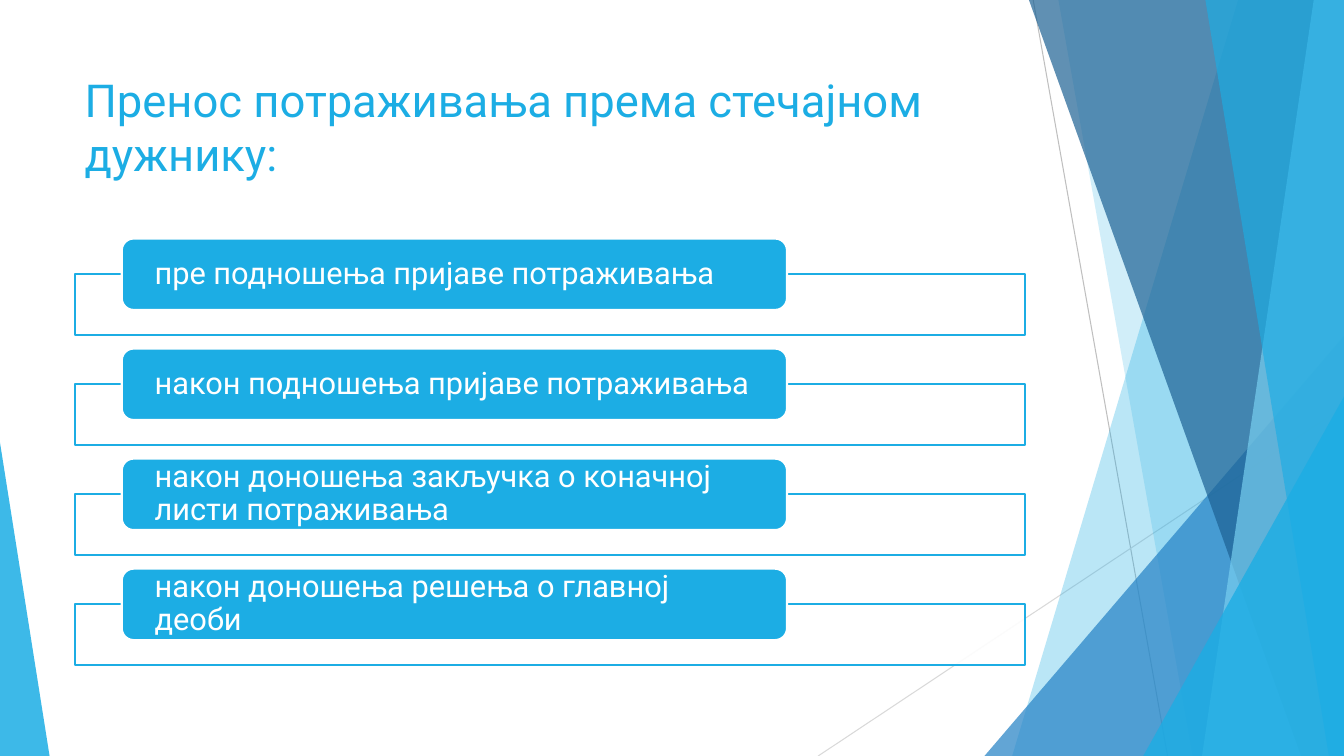
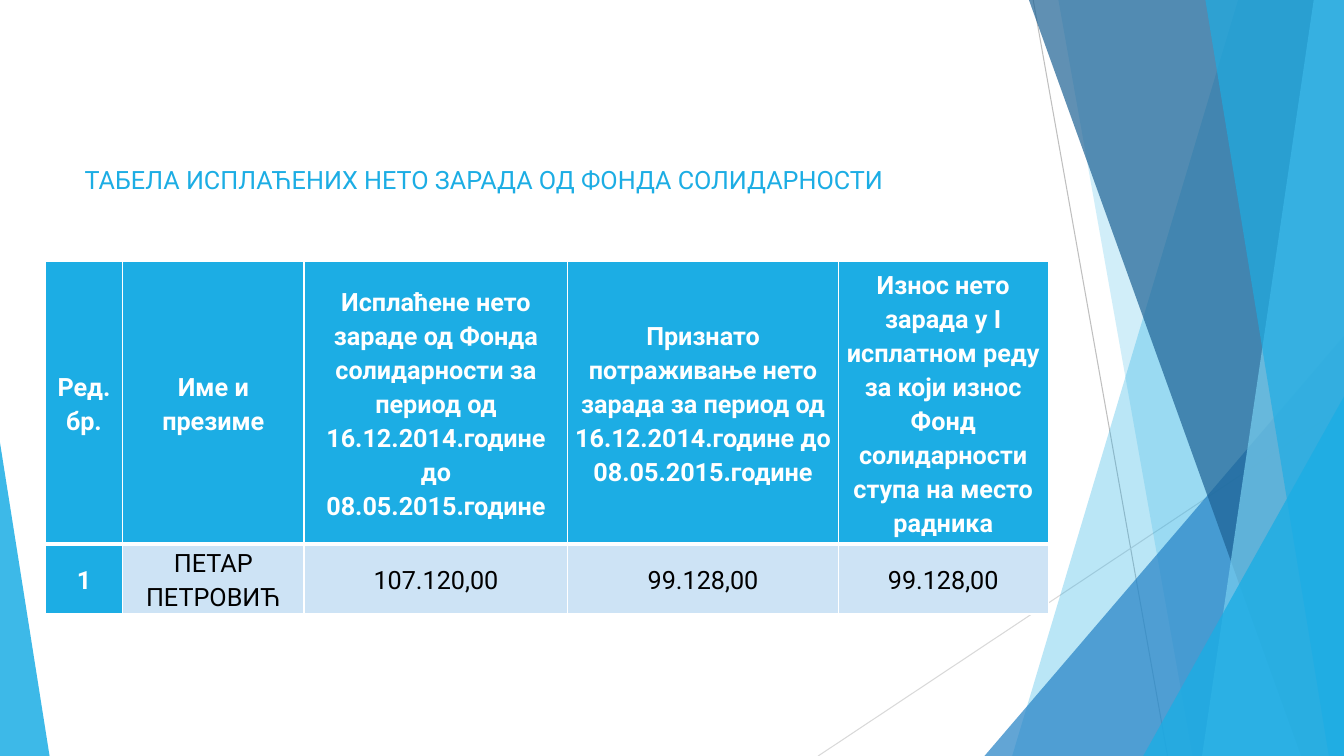
import dataclasses

import pptx
import pptx.dml.color
import pptx.enum.shapes
import pptx.enum.text
import pptx.oxml
import pptx.oxml.ns
import pptx.util

SHAPE = pptx.enum.shapes.MSO_SHAPE
ALIGN = pptx.enum.text.PP_ALIGN
ANCHOR = pptx.enum.text.MSO_ANCHOR

COLS, ROWS = 160, 90  # square grid, 12 cells to the inch


@dataclasses.dataclass(frozen=True)
class Theme:
    font: str = "Roboto"
    accent: str = "1CADE4"
    blue: str = "2683C6"
    navy: str = "1D6294"
    sky: str = "77CEEF"
    tint: str = "CDE3F5"
    white: str = "FFFFFF"
    black: str = "000000"
    rule_dark: str = "BFBFBF"
    rule_light: str = "D9D9D9"
    title_size: float = 32.4
    item_size: float = 22
    table_size: float = 18


def cells(n):
    return pptx.util.Inches(n / 12)


def rgb(colour):
    return pptx.dml.color.RGBColor.from_string(colour)


class Deck:
    def __init__(self, theme):
        self.theme = theme
        self.prs = pptx.Presentation()
        self.prs.slide_width = cells(COLS)
        self.prs.slide_height = cells(ROWS)
        self.s = None

    def new_slide(self):
        """Start a blank slide with the shared ribbons at its sides."""
        t = self.theme
        self.s = self.prs.slides.add_slide(self.prs.slide_layouts[6])
        self.rule(123, 0, 139, ROWS, t.rule_dark)
        self.rule(COLS, 48.4, 97.4, ROWS, t.rule_light)
        self.ribbon(147.4, 120.5, t.accent, 30)
        self.ribbon(126, 142, t.accent, 20)
        self.corner(117.2, COLS, 40, t.blue, 72)
        self.ribbon(122.5, 154.9, t.navy, 70)
        self.ribbon(156.4, 143.1, t.sky, 70)
        self.ribbon(143.5, 158.2, t.accent, 65)
        self.corner(136.1, COLS, 47.2, t.accent, 80)
        self.corner(0, 5.9, 52.7, t.accent, 85, apex=0)

    def paint(self, shape, fill, opacity=100, line=None):
        shape.shadow.inherit = False
        shape.fill.solid()
        shape.fill.fore_color.rgb = rgb(fill)
        if opacity < 100:
            clr = shape._element.spPr.xpath("a:solidFill/a:srgbClr")[0]
            alpha = pptx.oxml.parse_xml(
                f'<a:alpha {pptx.oxml.ns.nsdecls("a")} val="{opacity * 1000}"/>')
            clr.append(alpha)
        if line:
            shape.line.color.rgb = rgb(line)
            shape.line.width = pptx.util.Pt(1.5)
        else:
            shape.line.fill.background()

    def rule(self, x1, y1, x2, y2, colour):
        line = self.s.shapes.add_connector(
            pptx.enum.shapes.MSO_CONNECTOR.STRAIGHT,
            cells(x1), cells(y1), cells(x2), cells(y2))
        line.line.color.rgb = rgb(colour)
        line.line.width = pptx.util.Pt(0.75)
        line._element.spPr.append(pptx.oxml.parse_xml(
            f'<a:effectLst {pptx.oxml.ns.nsdecls("a")}/>'))

    def ribbon(self, top_x, bottom_x, colour, opacity):
        """Full-height panel from a slanted left edge to the slide's right edge."""
        outline = self.s.shapes.build_freeform(cells(top_x), 0)
        outline.add_line_segments([
            (cells(COLS), 0), (cells(COLS), cells(ROWS)), (cells(bottom_x), cells(ROWS))])
        self.paint(outline.convert_to_shape(), colour, opacity)

    def corner(self, left, right, top, colour, opacity, apex=1):
        """Right triangle on the bottom edge; apex 0 is at its left, 1 at its right."""
        sp = self.box(SHAPE.ISOSCELES_TRIANGLE, left, top, right - left, ROWS - top)
        sp.adjustments[0] = apex
        self.paint(sp, colour, opacity)

    def box(self, kind, x, y, w, h):
        return self.s.shapes.add_shape(kind, cells(x), cells(y), cells(w), cells(h))

    def add_text(self, p, text, size, colour, bold=False):
        r = p.add_run()
        r.text = text
        r.font.name = self.theme.font
        r.font.size = pptx.util.Pt(size)
        r.font.bold = bold
        r.font.color.rgb = rgb(colour)

    def title(self, text, size, y=8):
        sp = self.s.shapes.add_textbox(cells(8.9), cells(y), cells(112.8), cells(25.3 - y))
        tf = sp.text_frame
        tf.word_wrap = True
        self.add_text(tf.paragraphs[0], text, size, self.theme.accent)

    def item(self, y, text):
        """Outlined frame with a filled label over its top edge."""
        t = self.theme
        frame = self.box(SHAPE.RECTANGLE, 8.9, y + 4.2, 113.1, 7.3)
        self.paint(frame, t.white, 90, t.accent)
        label = self.box(SHAPE.ROUNDED_RECTANGLE, 14.5, y, 79.2, 8.5)
        self.paint(label, t.accent, line=t.white)
        tf = label.text_frame
        tf.word_wrap = True
        tf.vertical_anchor = ANCHOR.MIDDLE
        tf.margin_left = tf.margin_right = cells(3.5)
        tf.margin_top = tf.margin_bottom = 0
        p = tf.paragraphs[0]
        p.alignment = ALIGN.LEFT
        p.line_spacing = 0.9
        self.add_text(p, text, t.item_size, t.white)

    def borders(self, cell, bottom):
        tc_pr = cell._tc.get_or_add_tcPr()
        sides = {"lnL": 1, "lnR": 1, "lnT": 1, "lnB": bottom}
        for i, (side, width) in enumerate(sides.items()):
            tc_pr.insert(i, pptx.oxml.parse_xml(
                f'<a:{side} {pptx.oxml.ns.nsdecls("a")} w="{pptx.util.Pt(width)}">'
                f'<a:solidFill><a:srgbClr val="{self.theme.white}"/></a:solidFill>'
                f'</a:{side}>'))

    def table(self, x, y, widths, heights, rows):
        """Table whose first row and first column are headings."""
        t = self.theme
        tbl = self.s.shapes.add_table(
            len(heights), len(widths), cells(x), cells(y),
            cells(sum(widths)), cells(sum(heights))).table
        tbl.first_col = True
        tbl.horz_banding = False
        for col, w in zip(tbl.columns, widths):
            col.width = cells(w)
        for row, h in zip(tbl.rows, heights):
            row.height = cells(h)
        for i, row in enumerate(rows):
            for j, text in enumerate(row):
                heading = i == 0 or j == 0
                cell = tbl.cell(i, j)
                cell.fill.solid()
                cell.fill.fore_color.rgb = rgb(t.accent if heading else t.tint)
                self.borders(cell, bottom=3 if i == 0 else 1)
                cell.vertical_anchor = ANCHOR.MIDDLE
                cell.margin_left = cell.margin_right = pptx.util.Inches(0.07)
                cell.margin_top = cell.margin_bottom = 0
                p = cell.text_frame.paragraphs[0]
                p.alignment = ALIGN.CENTER
                p.line_spacing = 1.15
                self.add_text(p, text, t.table_size, t.white if heading else t.black, heading)


def main():
    theme = Theme()
    deck = Deck(theme)

    deck.new_slide()
    deck.title("Пренос потраживања према стечајном дужнику:", theme.title_size)
    stages = [
        "пре подношења пријаве потраживања",
        "након подношења пријаве потраживања",
        "након доношења закључка о коначној листи потраживања",
        "након доношења решења о главној деоби",
    ]
    for i, stage in enumerate(stages):
        deck.item(28.4 + 13.1 * i, stage)

    deck.new_slide()
    deck.title("ТАБЕЛА ИСПЛАЋЕНИХ НЕТО ЗАРАДА ОД ФОНДА СОЛИДАРНОСТИ",
               theme.table_size, y=19)
    deck.table(5.4, 31.1, [9.2, 21.6, 31.4, 32.2, 25], [33.7, 8.3], [
        ["Ред.бр.",
         "Име и презиме",
         "Исплаћене нето зараде од Фонда солидарности за период од "
         "16.12.2014.године до 08.05.2015.године",
         "Признато потраживање нето зарада за период од "
         "16.12.2014.године до 08.05.2015.године",
         "Износ нето зарада у I исплатном реду за који износ "
         "Фонд солидарности ступа на место радника"],
        ["1", "ПЕТАР ПЕТРОВИЋ", "107.120,00", "99.128,00", "99.128,00"],
    ])

    deck.prs.save("out.pptx")


if __name__ == "__main__":
    main()
